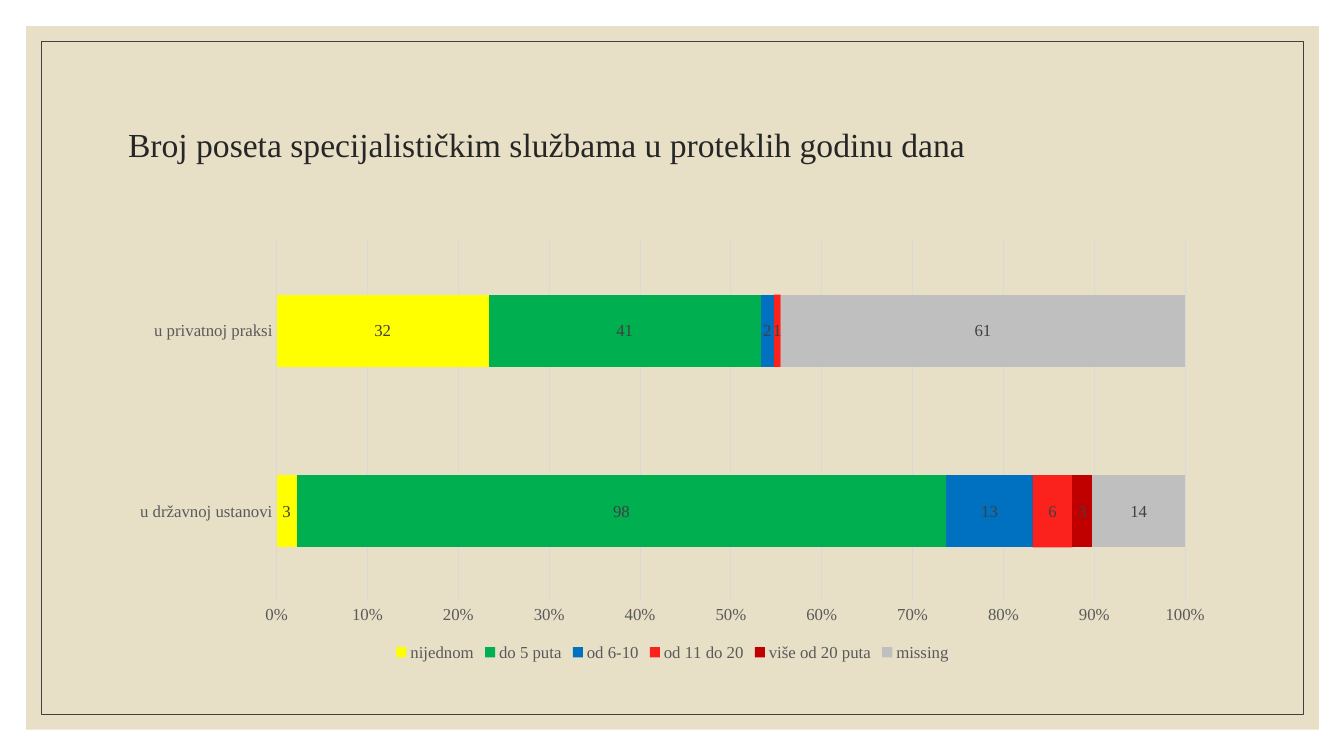
import pptx
import pptx.chart.data
import pptx.dml.color
import pptx.enum.chart
import pptx.enum.shapes
import pptx.enum.text
import pptx.oxml
import pptx.oxml.ns
import pptx.util
from pptx.util import Inches

RGBColor = pptx.dml.color.RGBColor
SAND = RGBColor(0xE7, 0xE0, 0xC7)
INK = RGBColor(0x26, 0x26, 0x26)
DARK = RGBColor(0x40, 0x40, 0x40)
GREY = RGBColor(0x59, 0x59, 0x59)
PALE = RGBColor(0xD9, 0xD9, 0xD9)
YELLOW = RGBColor(0xFF, 0xFF, 0x00)
GREEN = RGBColor(0x00, 0xB0, 0x50)
BLUE = RGBColor(0x00, 0x70, 0xC0)
RED = RGBColor(0xFF, 0x00, 0x00)
MAROON = RGBColor(0xC0, 0x00, 0x00)
SILVER = RGBColor(0xBF, 0xBF, 0xBF)

PLACES = ["u državnoj ustanovi", "u privatnoj praksi"]
VISITS = [
    ("nijednom", (3, 32), YELLOW),
    ("do 5 puta", (98, 41), GREEN),
    ("od 6-10", (13, 2), BLUE),
    ("od 11 do 20", (6, 1), RED),
    ("više od 20 puta", (3, None), MAROON),
    ("missing", (14, 61), SILVER),
]


def fade(fill, share):
    """Make a solid fill partly clear; share is its opacity in percent."""
    color = fill._xPr.find(".//" + pptx.oxml.ns.qn("a:srgbClr"))
    alpha = pptx.oxml.parse_xml(
        f'<a:alpha {pptx.oxml.ns.nsdecls("a")} val="{share * 1000}"/>')
    color.append(alpha)


class Deck:
    face = "Times New Roman"

    def __init__(self):
        self.show = pptx.Presentation()
        self.show.slide_width = Inches(13.33)
        self.show.slide_height = Inches(7.5)
        self.slide = self.show.slides.add_slide(self.show.slide_layouts[5])

    def style(self, font, size, color):
        font.name = self.face
        font.size = pptx.util.Pt(size)
        font.color.rgb = color

    def panel(self, box, fill=None, line=None):
        shape = self.slide.shapes.add_shape(
            pptx.enum.shapes.MSO_SHAPE.RECTANGLE, *map(Inches, box))
        shape.shadow.inherit = False
        if fill is None:
            shape.fill.background()
        else:
            shape.fill.solid()
            shape.fill.fore_color.rgb = fill
        if line is None:
            shape.line.fill.background()
        else:
            shape.line.color.rgb = line
            shape.line.width = pptx.util.Pt(0.5)

    def title(self, text, box):
        """Fill the title and bring it in front of the panels."""
        shape = self.slide.shapes.title
        shape.left, shape.top, shape.width, shape.height = map(Inches, box)
        frame = shape.text_frame
        frame.text = text
        frame.word_wrap = True
        frame.vertical_anchor = pptx.enum.text.MSO_ANCHOR.MIDDLE
        para = frame.paragraphs[0]
        para.alignment = pptx.enum.text.PP_ALIGN.LEFT
        para.line_spacing = 0.9
        self.style(para.runs[0].font, 24, INK)
        shape.element.getparent().append(shape.element)

    def axis(self, axis):
        axis.major_tick_mark = pptx.enum.chart.XL_TICK_MARK.NONE
        axis.minor_tick_mark = pptx.enum.chart.XL_TICK_MARK.NONE
        self.style(axis.tick_labels.font, 12, GREY)

    def rule(self, line):
        line.color.rgb = PALE
        line.width = pptx.util.Pt(0.75)

    def bars(self, box, cats, rows):
        data = pptx.chart.data.CategoryChartData()
        data.categories = cats
        for name, values, _ in rows:
            data.add_series(name, values)
        kind = pptx.enum.chart.XL_CHART_TYPE.BAR_STACKED_100
        chart = self.slide.shapes.add_chart(
            kind, *map(Inches, box), data).chart
        self.style(chart.font, 10, RGBColor(0, 0, 0))
        chart.has_title = False

        chart.has_legend = True
        chart.legend.position = pptx.enum.chart.XL_LEGEND_POSITION.BOTTOM
        chart.legend.include_in_layout = False
        self.style(chart.legend.font, 12, GREY)

        self.axis(chart.category_axis)
        self.rule(chart.category_axis.format.line)
        scale = chart.value_axis
        self.axis(scale)
        scale.format.line.fill.background()
        scale.has_major_gridlines = True
        self.rule(scale.major_gridlines.format.line)
        scale.tick_labels.number_format = "0%"
        scale.tick_labels.number_format_is_linked = False

        plot = chart.plots[0]
        plot.gap_width = 150
        plot.overlap = 100
        plot.vary_by_categories = False
        for series, (_, _, color) in zip(plot.series, rows):
            fill = series.format.fill
            fill.solid()
            fill.fore_color.rgb = color
            if color == RED:
                fade(fill, 85)
            labels = series.data_labels
            labels.show_value = True
            labels.position = pptx.enum.chart.XL_LABEL_POSITION.CENTER
            self.style(labels.font, 12, DARK)


def main():
    deck = Deck()
    deck.panel((0.26, 0.26, 12.82, 6.98), fill=SAND)
    deck.panel((0.41, 0.41, 12.52, 6.68), line=DARK)
    deck.title("Broj poseta specijalističkim službama u proteklih godinu dana",
               (1.17, 0.7, 11, 1.5))
    deck.bars((1.17, 2.3, 11, 4.3), PLACES, VISITS)
    deck.show.save("out.pptx")


if __name__ == "__main__":
    main()
